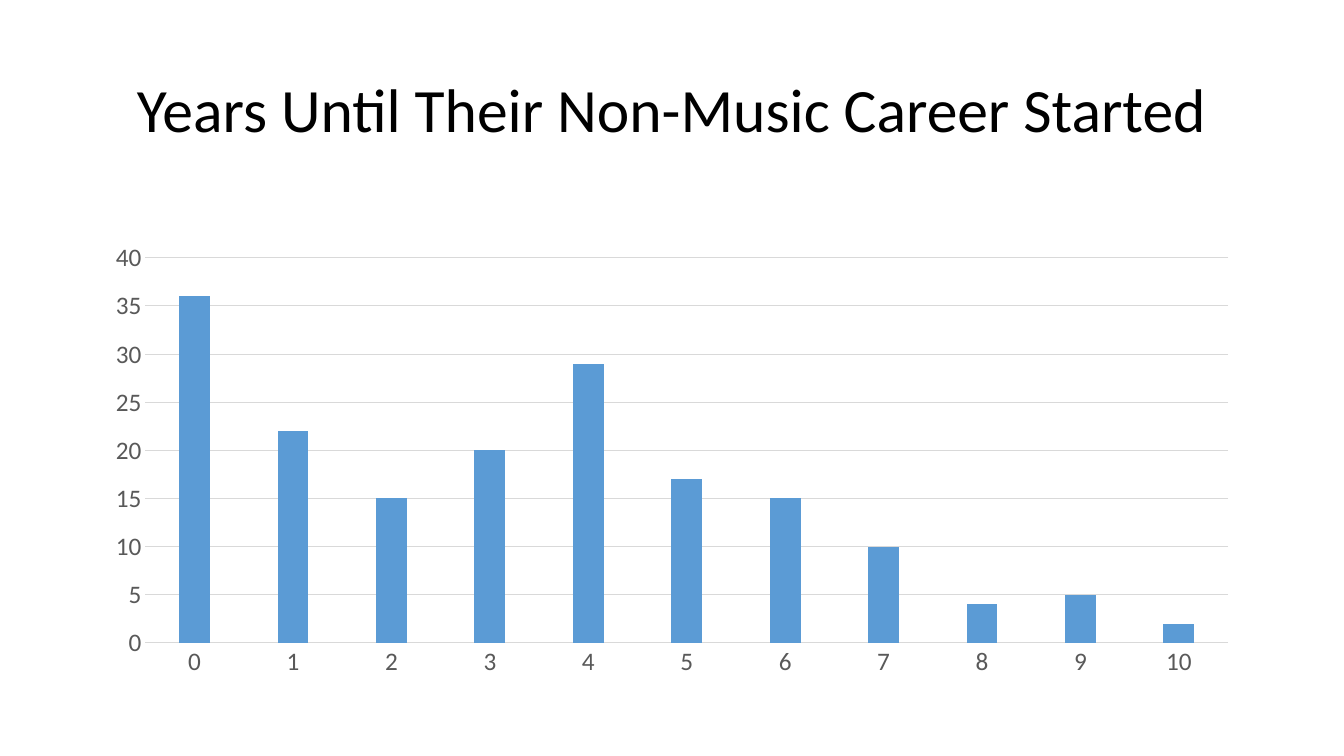
from pptx import Presentation
from pptx import util as u
from pptx.chart.data import CategoryChartData
from pptx.dml.color import RGBColor
from pptx.enum import chart as ch, text

FONT = "Calibri"
HUES = {"ink": "000000", "label": "595959", "rule": "D9D9D9", "bar": "5B9BD5"}
WIDE, HIGH = u.Inches(13.33), u.Inches(7.5)
LEFT, SPAN = 0.069, 0.862  # shares of the slide's width
YEARS = [36, 22, 15, 20, 29, 17, 15, 10, 4, 5, 2]


def hue(name):
    return RGBColor.from_string(HUES[name])


def area(top, tall):
    """Box in the main column, from shares of the slide's height."""
    return [int(n) for n in (LEFT * WIDE, top * HIGH, SPAN * WIDE, tall * HIGH)]


def style(font, size, name):
    font.name = FONT
    font.size = u.Pt(size)
    font.bold = False
    font.color.rgb = hue(name)


def rule(line):
    line.color.rgb = hue("rule")
    line.width = u.Pt(0.75)


def add_title(slide, words):
    title = slide.shapes.title
    title.left, title.top, title.width, title.height = area(0.053, 0.193)
    frame = title.text_frame
    frame.text = words
    frame.word_wrap = True
    frame.vertical_anchor = text.MSO_ANCHOR.MIDDLE
    para = frame.paragraphs[0]
    para.alignment = text.PP_ALIGN.CENTER
    para.line_spacing = 0.9
    style(para.runs[0].font, 44, "ink")


def add_bars(slide, values):
    data = CategoryChartData()
    data.categories = [str(n) for n in range(len(values))]
    data.add_series("Series 1", values)
    kind = ch.XL_CHART_TYPE.COLUMN_CLUSTERED
    chart = slide.shapes.add_chart(kind, *area(0.309, 0.599), data).chart
    chart.has_title = False
    chart.has_legend = False
    style(chart.font, 10, "ink")

    # Bars
    plot = chart.plots[0]
    plot.gap_width = 219
    plot.overlap = -27
    plot.vary_by_categories = False
    fill = plot.series[0].format.fill
    fill.solid()
    fill.fore_color.rgb = hue("bar")

    # Axes and grid
    for axis in (chart.category_axis, chart.value_axis):
        axis.major_tick_mark = axis.minor_tick_mark = ch.XL_TICK_MARK.NONE
        style(axis.tick_labels.font, 18, "label")
    rule(chart.category_axis.format.line)
    scale = chart.value_axis
    scale.minimum_scale, scale.maximum_scale, scale.major_unit = 0, 40, 5
    scale.format.line.fill.background()
    scale.has_major_gridlines = True
    rule(scale.major_gridlines.format.line)


def main():
    deck = Presentation()
    deck.slide_width, deck.slide_height = WIDE, HIGH
    slide = deck.slides.add_slide(deck.slide_layouts[5])
    add_title(slide, "Years Until Their Non-Music Career Started")
    add_bars(slide, YEARS)
    deck.save("out.pptx")


if __name__ == "__main__":
    main()
